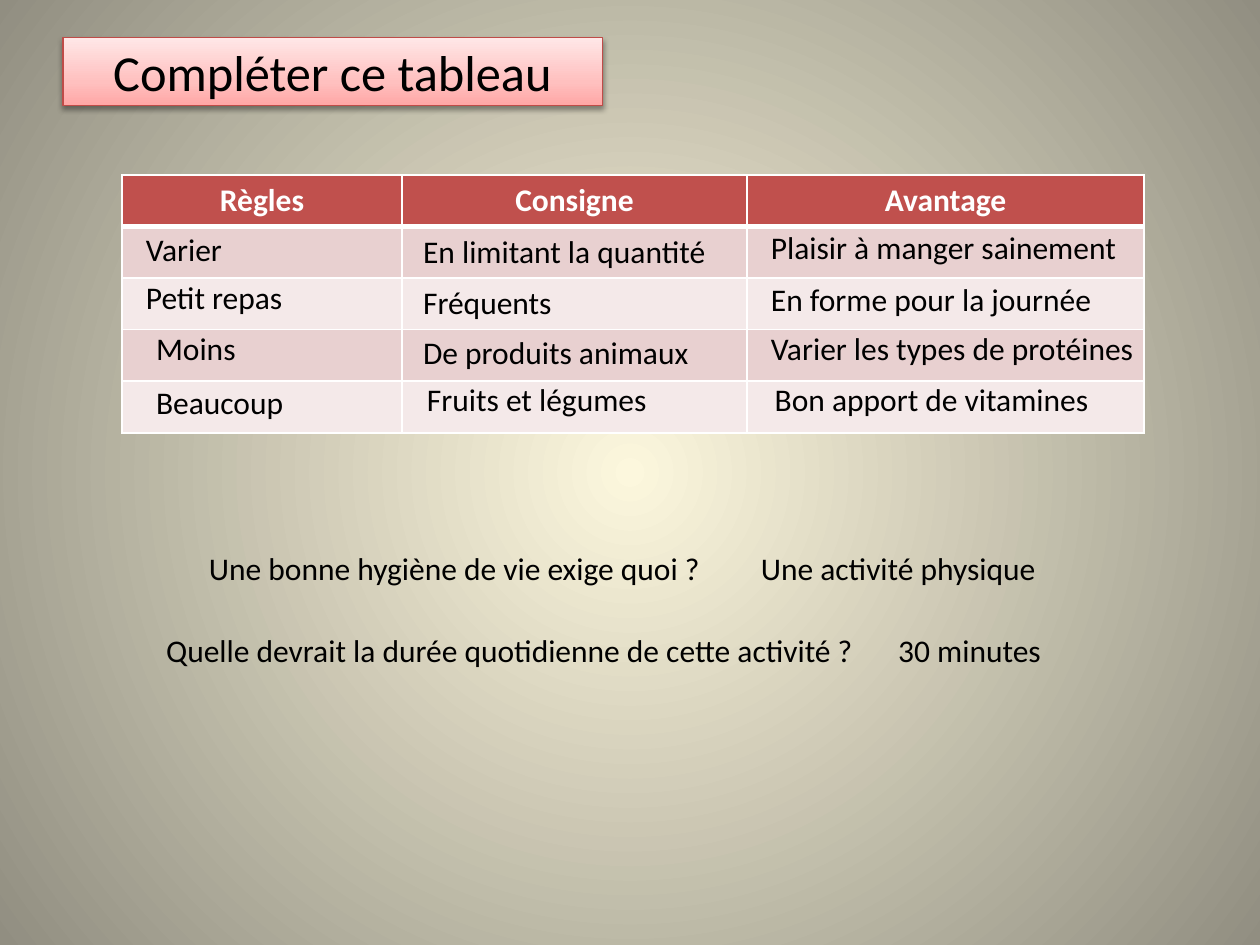
from copy import deepcopy

from lxml import etree
from pptx import Presentation
from pptx.dml.color import RGBColor
from pptx.enum.shapes import MSO_SHAPE
from pptx.enum.text import MSO_ANCHOR, MSO_AUTO_SIZE, PP_ALIGN
from pptx.oxml.ns import qn
from pptx.util import Inches, Pt

RECT = MSO_SHAPE.RECTANGLE
MIDDLE = MSO_ANCHOR.MIDDLE
CENTER = PP_ALIGN.CENTER
FIT = MSO_AUTO_SIZE.SHAPE_TO_FIT_TEXT


def rgb(value):
    return RGBColor.from_string(value)


def style(p, size, color, bold=False):
    p.font.name = "Calibri"
    p.font.size = Pt(size)
    p.font.bold = bold
    p.font.color.rgb = rgb(color)


prs = Presentation()
prs.slide_width, prs.slide_height = Inches(10), Inches(7.5)
s = prs.slides.add_slide(prs.slide_layouts[6])

fill = s.background.fill
fill.gradient()
for stop, color in zip(fill.gradient_stops, ["FCF7DD", "918E81"]):
    stop.color.rgb = rgb(color)
lin = next(s.element.iter(qn("a:lin")))
radial = etree.Element(qn("a:path"), path="circle")
etree.SubElement(radial, qn("a:fillToRect"), l="50000", t="50000", r="50000", b="50000")
lin.getparent().replace(lin, radial)

sp = s.shapes.add_shape(RECT, Inches(0.5), Inches(0.3), Inches(4.28), Inches(0.54))
sp.fill.gradient()
sp.fill.gradient_angle = 90
stops = next(sp.element.iter(qn("a:gsLst")))
stops.insert(1, deepcopy(stops[0]))
title_stops = [(0, "FFA6A5"), (0.35, "FFC0BF"), (1, "FFE7E7")]
for stop, (position, color) in zip(sp.fill.gradient_stops, title_stops):
    stop.position = position
    stop.color.rgb = rgb(color)
sp.line.color.rgb = rgb("BF4C48")
sp.line.width = Pt(0.75)
sp.shadow.inherit = False
effects = next(sp.element.iter(qn("a:effectLst")))
shadow = etree.SubElement(effects, qn("a:outerShdw"), blurRad="40000", dist="20000",
                          dir="5400000", rotWithShape="0")
black = etree.SubElement(shadow, qn("a:srgbClr"), val="000000")
etree.SubElement(black, qn("a:alpha"), val="38000")
tf = sp.text_frame
tf.vertical_anchor = MIDDLE
p = tf.paragraphs[0]
p.text = "Compléter ce tableau"
p.alignment = CENTER
style(p, 28.8, "000000")

headers = ["Règles", "Consigne", "Avantage"]
widths = [2.22, 2.74, 3.15]
heights = [0.39] + [0.41] * 4
row_fills = ["C0504D"] + ["E8D0D0", "F4E9E9"] * 2
table = s.shapes.add_table(len(heights), len(widths), Inches(0.97), Inches(1.39),
                           Inches(sum(widths)), Inches(sum(heights))).table
for column, width in zip(table.columns, widths):
    column.width = Inches(width)
for i, row in enumerate(table.rows):
    row.height = Inches(heights[i])
    for j, cell in enumerate(row.cells):
        cell.fill.solid()
        cell.fill.fore_color.rgb = rgb(row_fills[i])
        p = cell.text_frame.paragraphs[0]
        style(p, 18, "FFFFFF", i == 0)
        if i == 0:
            p.text = headers[j]
            p.alignment = CENTER
        tc_pr = cell._tc.get_or_add_tcPr()
        for k, side in enumerate(["lnL", "lnR", "lnT", "lnB"]):
            thick = (i, side) in [(0, "lnB"), (1, "lnT")]
            ln = etree.Element(qn("a:" + side), w=str(Pt(3 if thick else 1)))
            solid = etree.SubElement(ln, qn("a:solidFill"))
            etree.SubElement(solid, qn("a:srgbClr"), val="FFFFFF")
            tc_pr.insert(k, ln)

texts = [
    (1.56, 4.31, 4.15, "Une bonne hygiène de vie exige quoi ?"),
    (5.94, 4.31, 2.41, "Une activité physique"),
    (1.22, 4.96, 5.98, "Quelle devrait la durée quotidienne de cette activité ?"),
    (7.03, 4.96, 1.39, "30 minutes"),
    (1.06, 1.78, 0.81, "Varier"),
    (1.06, 2.16, 1.3, "Petit repas"),
    (1.14, 2.56, 0.84, "Moins"),
    (1.14, 2.99, 1.22, "Beaucoup"),
    (3.26, 1.79, 2.47, "En limitant la quantité"),
    (3.26, 2.2, 1.23, "Fréquents"),
    (3.26, 2.59, 2.33, "De produits animaux"),
    (3.29, 2.97, 1.97, "Fruits et légumes"),
    (6.02, 1.76, 2.97, "Plaisir à manger sainement"),
    (6.02, 2.17, 2.78, "En forme pour la journée"),
    (6.02, 2.56, 3.11, "Varier les types de protéines"),
    (6.05, 2.97, 2.72, "Bon apport de vitamines"),
]
for left, top, width, text in texts:
    tf = s.shapes.add_textbox(Inches(left), Inches(top), Inches(width), Inches(0.4)).text_frame
    tf.word_wrap = False
    tf.auto_size = FIT
    p = tf.paragraphs[0]
    p.text = text
    style(p, 18, "000000")

prs.save("out.pptx")
